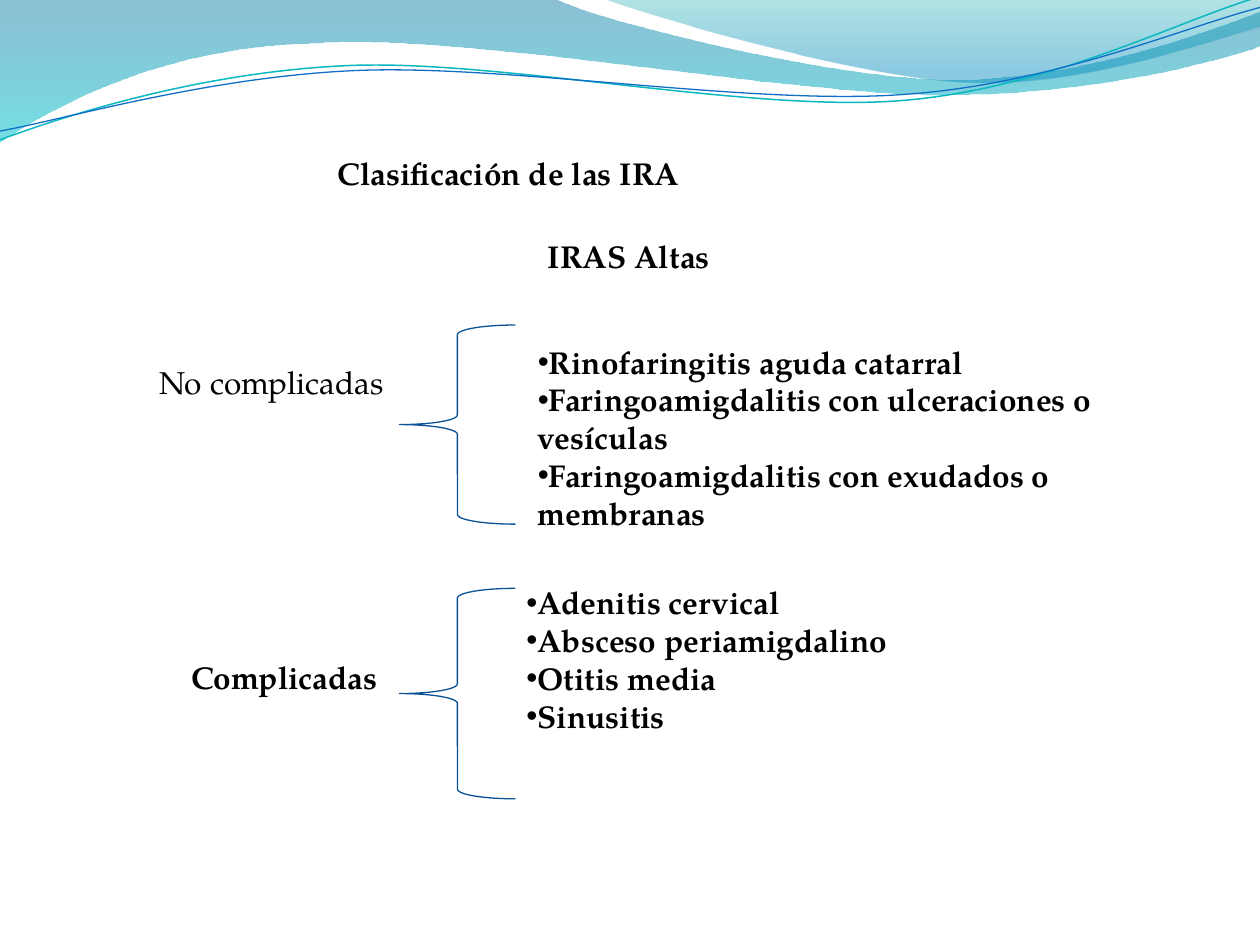
import math

from lxml import etree
from pptx import Presentation
from pptx.dml.color import RGBColor
from pptx.enum import shapes, text
from pptx.oxml.ns import qn
from pptx.util import Inches, Pt

FONT = "TeX Gyre Pagella"
TILT = 357.3
COLORS = {
    "text": "000000", "brace": "095295",
    "deep": "0074A1", "cyan": "00C6CF", "teal": "00A1A9", "blue": "008BBF",
    "line_teal": "0AB8BF", "line_blue": "0F6FC6",
}


def rgb(name):
    return RGBColor.from_string(COLORS[name])


def turn(point, center, degrees):
    """Turn a point clockwise around a center."""
    a = math.radians(degrees)
    dx, dy = point[0] - center[0], point[1] - center[1]
    return (center[0] + dx * math.cos(a) - dy * math.sin(a),
            center[1] + dx * math.sin(a) + dy * math.cos(a))


def add_curve(s, start, segments, close, center=(0, 0), rotation=0):
    """Outline of lines (2 numbers) and cubic curves (6 numbers)."""
    points = [start] + [seg[i:i + 2] for seg in segments for i in range(0, len(seg), 2)]
    pts = [tuple(map(Inches, turn(p, center, -rotation))) for p in points]
    builder = s.shapes.build_freeform(*pts[0])
    builder.add_line_segments(pts[1:], close=close)
    sp = builder.convert_to_shape()
    sp.shadow.inherit = False
    sp.rotation = rotation
    # Merge each group of three points into one cubic curve
    nodes = iter(list(sp._element.spPr.iter(qn("a:lnTo"))))
    for seg in segments:
        group = [next(nodes) for _ in range(len(seg) // 2)]
        if len(group) == 3:
            cubic = etree.Element(qn("a:cubicBezTo"))
            group[0].addprevious(cubic)
            for node in group:
                cubic.append(node[0])
                node.getparent().remove(node)
    return sp


def add_wave(s, start, segments, stops):
    """Closed band; stops are (position, colour, opacity in percent)."""
    sp = add_curve(s, start, segments, True)
    sp.line.fill.background()
    sp.fill.gradient()
    sp.fill.gradient_angle = 270
    for stop, (position, color, _) in zip(sp.fill.gradient_stops, stops):
        stop.position = position
        stop.color.rgb = rgb(color)
    for clr, (_, _, opacity) in zip(sp._element.spPr.iter(qn("a:srgbClr")), stops):
        etree.SubElement(clr, qn("a:alpha")).set("val", str(opacity * 1000))


def add_wave_line(s, start, segments, center, color, width):
    sp = add_curve(s, start, segments, False, center, TILT)
    sp.fill.background()
    sp.line.color.rgb = rgb(color)
    sp.line.width = Pt(width)


def add_brace(s, top, height):
    sp = s.shapes.add_shape(shapes.MSO_SHAPE.LEFT_BRACE, Inches(3.17), Inches(top),
                            Inches(0.92), Inches(height))
    sp.shadow.inherit = False
    sp.fill.background()
    sp.line.color.rgb = rgb("brace")
    sp.line.width = Pt(0.75)


def add_text(s, box, lines, bold=True, bullets=False):
    sp = s.shapes.add_textbox(*map(Inches, box))
    tf = sp.text_frame
    tf.word_wrap = True
    tf.auto_size = text.MSO_AUTO_SIZE.SHAPE_TO_FIT_TEXT
    for i, line in enumerate(lines):
        p = tf.paragraphs[0] if i == 0 else tf.add_paragraph()
        if bullets:
            pPr = p._p.get_or_add_pPr()
            etree.SubElement(pPr, qn("a:buFont")).set("typeface", "Arial")
            etree.SubElement(pPr, qn("a:buChar")).set("char", "•")
        r = p.add_run()
        r.text = line
        r.font.name = FONT
        r.font.size = Pt(18)
        r.font.bold = bold
        r.font.color.rgb = rgb("text")


def add_header_waves(s):
    add_wave(s, (0, 0), [
        (4.4, -0.01), (4.76, 0.17, 6.64, 0.63, 7.58, 0.63),
        (8.53, 0.63, 9.58, 0.26, 10, 0.09), (10.01, 0.36),
        (9.83, 0.44, 8.7, 0.76, 7.46, 0.75), (6.22, 0.75, 3.82, 0.28, 2.57, 0.34),
        (1.29, 0.36, 0.46, 0.83, -0.01, 1.13), (0, 0)],
        [(0, "deep", 45), (1, "cyan", 55)])
    add_wave(s, (4.79, -0.01), [
        (5.09, 0.11, 6.82, 0.62, 7.69, 0.65), (8.56, 0.69, 9.61, 0.32, 10, 0.21),
        (10, 0), (4.79, -0.01)],
        [(0, "teal", 30), (0.8, "blue", 45)])
    add_wave_line(s, (0, 1.11), [
        (0.48, 0.93, 1.58, 0.57, 2.77, 0.52), (3.95, 0.47, 5.93, 0.89, 7.13, 0.8),
        (8.33, 0.71, 9.38, 0.15, 9.98, -0.02)], (4.99, 0.58), "line_teal", 0.85)
    add_wave_line(s, (0, 1.04), [
        (0.47, 0.96, 1.64, 0.61, 2.83, 0.56), (4.03, 0.51, 5.97, 0.84, 7.17, 0.75),
        (8.36, 0.67, 9.41, 0.21, 10, 0.06)], (5, 0.59), "line_blue", 0.75)


def main():
    prs = Presentation()
    prs.slide_width, prs.slide_height = Inches(10), Inches(7.5)
    s = prs.slides.add_slide(prs.slide_layouts[6])

    add_header_waves(s)

    # Title
    add_text(s, (2.58, 1.17, 5.5, 0.71), ["Clasificación de las IRA"])

    # Uncomplicated infections
    add_text(s, (1.17, 2.83, 3, 0.4), ["No complicadas"], bold=False)
    add_brace(s, 2.58, 1.58)
    add_text(s, (4.25, 1.83, 2, 0.42), ["IRAS Altas"])
    add_text(s, (4.17, 2.67, 5.25, 1.92), [
        "Rinofaringitis aguda catarral",
        "Faringoamigdalitis con ulceraciones o vesículas",
        "Faringoamigdalitis con exudados o membranas"], bullets=True)

    # Complicated infections
    add_text(s, (1.42, 5.17, 1.83, 0.4), ["Complicadas"])
    add_brace(s, 4.67, 1.67)
    add_text(s, (4.08, 4.58, 4.08, 1.31), [
        "Adenitis cervical", "Absceso periamigdalino", "Otitis media", "Sinusitis"],
        bullets=True)

    prs.save("out.pptx")


if __name__ == "__main__":
    main()
